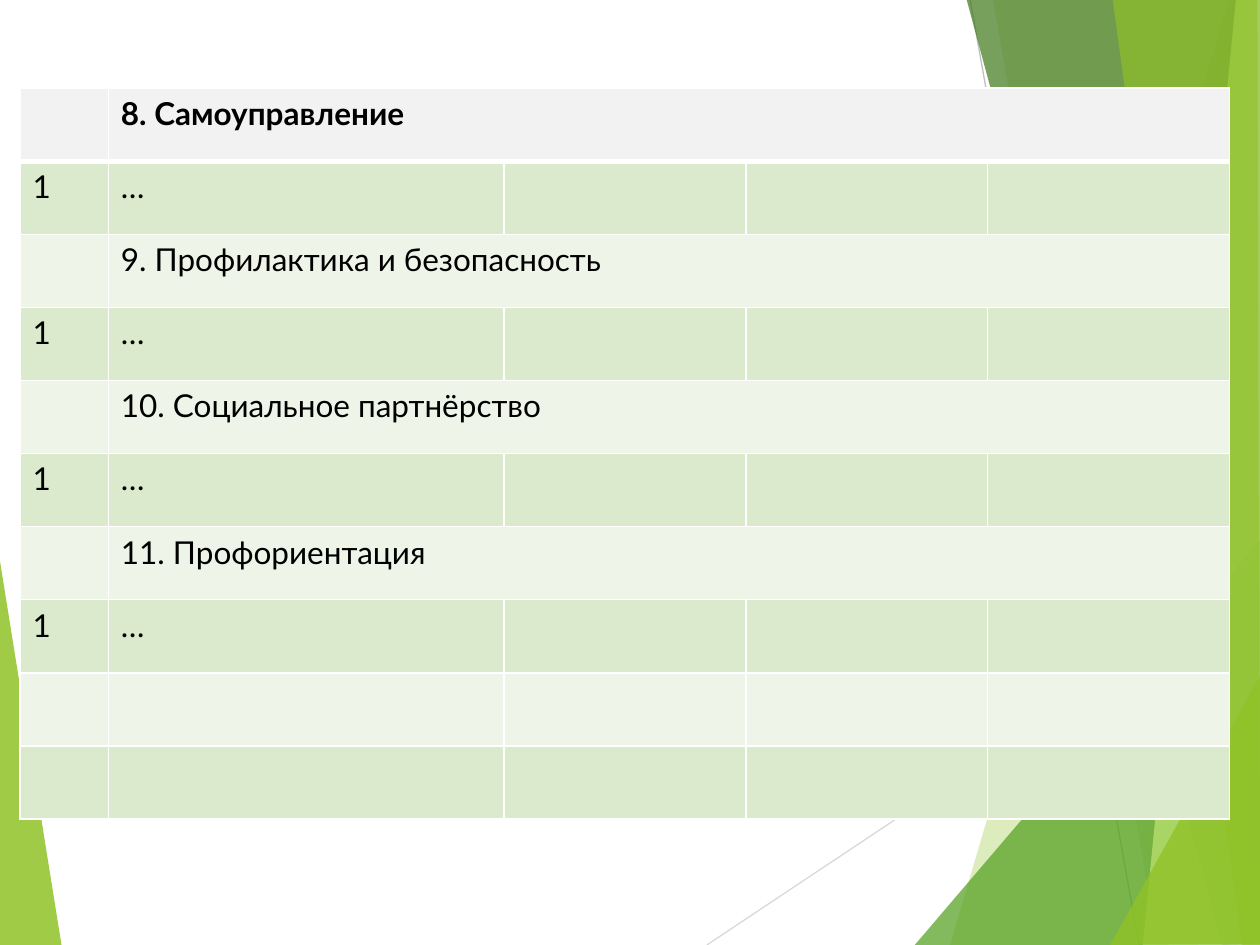
from lxml.etree import SubElement
from pptx import Presentation
from pptx.dml.color import RGBColor as Rgb
from pptx.enum.shapes import MSO_CONNECTOR as Connector
from pptx.oxml.ns import qn
from pptx.util import Inches, Pt

COLORS = {
    "leaf": "90C226", "grass": "54A021", "forest": "3F7819", "lime": "C0E474",
    "pale_line": "D9D9D9", "grey_line": "BFBFBF", "white": "FFFFFF", "text": "000000",
    "header": "F2F2F2", "dark_band": "DBE9CD", "light_band": "EEF4E8",
}
RAYS = [
    ("pale_line", (5.61, 7.5), (10.01, 4.57)),
    ("grey_line", (7.7, 0), (9.04, 7.5)),
]
LEFT_FACET = ("leaf", 85, [(-0.01, 4.39), (0.49, 7.51), (-0.01, 7.5)])
RIGHT_FACETS = [
    ("leaf", 30, [(9.75, 0), (7.54, 7.5), (10.02, 7.51), (10.01, 0.01)]),
    ("leaf", 20, [(7.88, -0.01), (9.19, 7.5), (10.01, 7.5), (10.01, -0.01)]),
    ("grass", 72, [(7.26, 7.5), (10, 4.29), (10.01, 7.5)]),
    ("forest", 70, [(7.67, -0.01), (9.7, 7.5), (10.01, 7.49), (10.01, -0.01)]),
    ("lime", 70, [(9.81, -0.01), (9.07, 7.5), (10.01, 7.5), (10, -0.01)]),
    ("leaf", 65, [(8.83, -0.01), (9.86, 7.5), (10, 7.5), (9.98, -0.01)]),
    ("leaf", 80, [(8.81, 7.5), (10.01, 5.35), (10.01, 7.49)]),
]
SECTIONS = [
    "8. Самоуправление",
    "9. Профилактика и безопасность",
    "10. Социальное партнёрство",
    "11. Профориентация",
]
COLUMN_WIDTHS = [0.7, 3.14, 1.92, 1.92, 1.92]
ROW_HEIGHT = 0.58
SPARE_ROWS = 2


class SlideBuilder:
    def __init__(self, slide, font="Lato", size=18):
        self.slide = slide
        self.text_format = {"name": font, "size": Pt(size), "bold": False}

    def color(self, name):
        return Rgb.from_string(COLORS[name])

    def background(self, color):
        fill = self.slide.background.fill
        fill.solid()
        fill.fore_color.rgb = self.color(color)

    def ray(self, color, start, end):
        ends = [Inches(value) for value in (*start, *end)]
        ray = self.slide.shapes.add_connector(Connector.STRAIGHT, *ends)
        ray.line.color.rgb = self.color(color)
        ray.line.width = Pt(0.75)
        SubElement(ray._element.spPr, qn("a:effectLst"))

    def facet(self, color, opacity, corners):
        first, *rest = [(Inches(x), Inches(y)) for x, y in corners]
        outline = self.slide.shapes.build_freeform(*first)
        outline.add_line_segments(rest, close=True)
        facet = outline.convert_to_shape()
        facet.shadow.inherit = False
        facet.line.fill.background()
        facet.fill.solid()
        facet.fill.fore_color.rgb = self.color(color)
        tint = facet._element.spPr.find(qn("a:solidFill"))[0]
        SubElement(tint, qn("a:alpha"), val=str(opacity * 1000))

    def borders(self, cell, **widths):
        properties = cell._tc.get_or_add_tcPr()
        for side in "LRTB":
            width = Pt(widths.get(side, 1))
            edge = SubElement(properties, qn(f"a:ln{side}"), w=str(width))
            fill = SubElement(edge, qn("a:solidFill"))
            SubElement(fill, qn("a:srgbClr"), val=COLORS["white"])

    def cell_text(self, cell, text, **changes):
        run = cell.text_frame.paragraphs[0].add_run()
        run.text = text
        for key, value in (self.text_format | changes).items():
            setattr(run.font, key, value)
        run.font.color.rgb = self.color("text")

    def section_table(self, left, top, sections, spare_rows):
        row_count = 2 * len(sections) + spare_rows
        table = self.slide.shapes.add_table(
            row_count, len(COLUMN_WIDTHS), Inches(left), Inches(top),
            Inches(sum(COLUMN_WIDTHS)), Inches(ROW_HEIGHT * row_count)).table
        for column, width in zip(table.columns, COLUMN_WIDTHS):
            column.width = Inches(width)
        for index, row in enumerate(table.rows):
            row.height = Inches(ROW_HEIGHT)
            band = "dark_band" if index % 2 else "light_band" if index else "header"
            widths = {0: {"B": 3}, 1: {"T": 3}}.get(index, {})
            for cell in row.cells:
                self.borders(cell, **widths)
                cell.fill.solid()
                cell.fill.fore_color.rgb = self.color(band)
        for number, section in enumerate(sections):
            heading_row = 2 * number
            heading = table.cell(heading_row, 1)
            heading.merge(table.cell(heading_row, len(COLUMN_WIDTHS) - 1))
            self.cell_text(heading, section, bold=number == 0)
            for column, entry in enumerate(["1", "…"]):
                self.cell_text(table.cell(heading_row + 1, column), entry)


def main():
    deck = Presentation()
    deck.slide_width, deck.slide_height = Inches(10), Inches(7.5)
    builder = SlideBuilder(deck.slides.add_slide(deck.slide_layouts[6]))
    builder.background("white")
    builder.facet(*LEFT_FACET)
    for ray in RAYS:
        builder.ray(*ray)
    for facet in RIGHT_FACETS:
        builder.facet(*facet)
    builder.section_table(0.16, 0.7, SECTIONS, SPARE_ROWS)
    deck.save("out.pptx")


if __name__ == "__main__":
    main()
